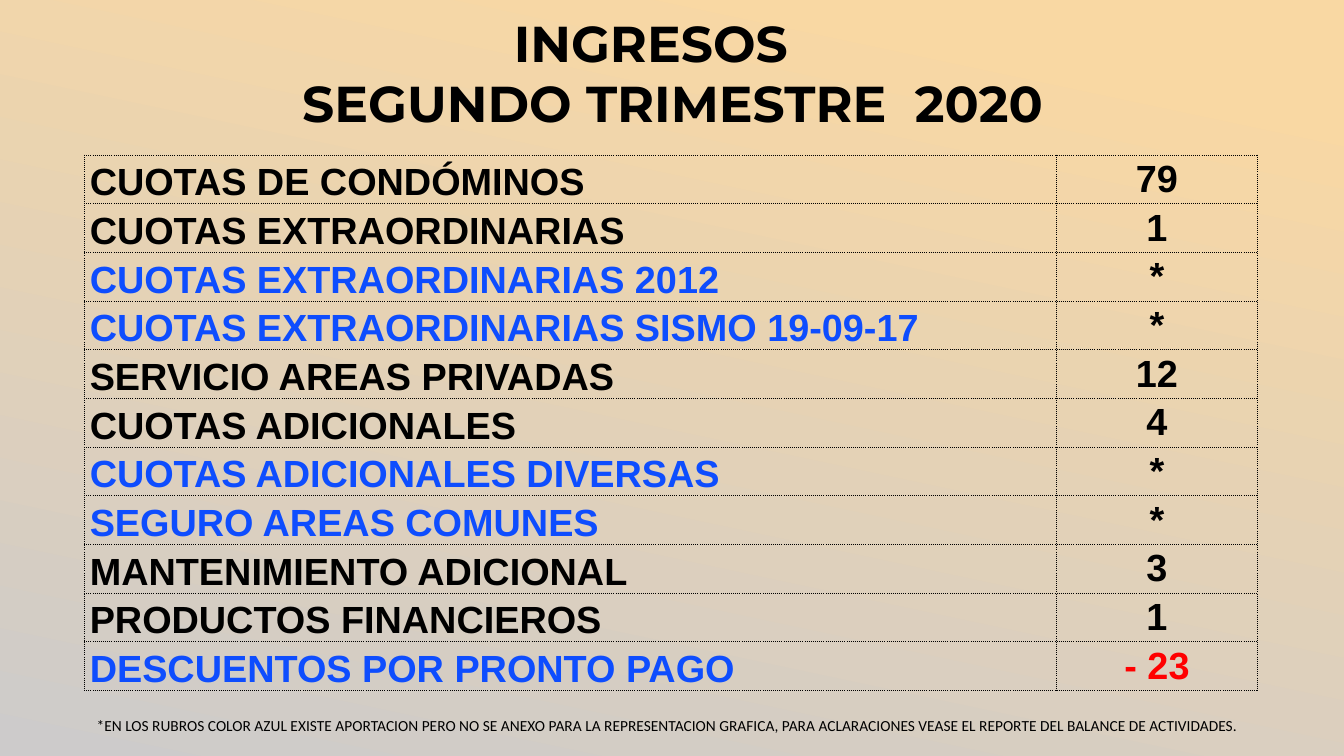
from dataclasses import dataclass

from lxml.etree import SubElement
from pptx import Presentation
from pptx.dml.color import RGBColor
from pptx.enum.text import MSO_ANCHOR as Anchor, PP_ALIGN as Align
from pptx.oxml.ns import qn
from pptx.util import Inches, Pt

COLORS = {
    "black": "000000",
    "blue": "0E4DFE",
    "red": "FF0000",
    "sand": "F9D8A3",
    "gray": "CDCBCB",
}


@dataclass
class Income:
    concept: str
    amount: str
    concept_color: str = "black"
    amount_color: str = "black"


INCOMES = [
    Income("CUOTAS DE CONDÓMINOS", "79"),
    Income("CUOTAS EXTRAORDINARIAS", "1"),
    Income("CUOTAS EXTRAORDINARIAS 2012", "*", "blue"),
    Income("CUOTAS EXTRAORDINARIAS SISMO 19-09-17", "*", "blue"),
    Income("SERVICIO AREAS PRIVADAS", "12"),
    Income("CUOTAS ADICIONALES", "4"),
    Income("CUOTAS ADICIONALES DIVERSAS", "*", "blue"),
    Income("SEGURO AREAS COMUNES", "*", "blue"),
    Income("MANTENIMIENTO ADICIONAL", "3"),
    Income("PRODUCTOS FINANCIEROS", "1"),
    Income("DESCUENTOS POR PRONTO PAGO", "- 23", "blue", "red"),
]


def rgb(name: str) -> RGBColor:
    return RGBColor.from_string(COLORS[name])


def write(paragraph, text: str, *, size: float, font: str, color: str = "black",
          bold: bool = False, align=Align.LEFT, spacing: float = 1.0) -> None:
    paragraph.alignment = align
    paragraph.line_spacing = spacing
    run = paragraph.add_run()
    run.text = text
    run.font.size = Pt(size)
    run.font.name = font
    run.font.bold = bold
    run.font.color.rgb = rgb(color)


def add_frame(slide, left: float, top: float, width: float, height: float):
    frame = slide.shapes.add_textbox(
        Inches(left), Inches(top), Inches(width), Inches(height)).text_frame
    frame.word_wrap = True
    return frame


def paint_background(slide) -> None:
    fill = slide.background.fill
    fill.gradient()
    fill.gradient_angle = 360 - 102
    for stop, color, position in zip(fill.gradient_stops, ("sand", "gray"), (0.1, 1)):
        stop.color.rgb = rgb(color)
        stop.position = position


def add_dotted_borders(cell) -> None:
    properties = cell._tc.get_or_add_tcPr()
    for index, side in enumerate(("lnL", "lnR", "lnT", "lnB")):
        border = properties.makeelement(qn(f"a:{side}"), {"w": str(Pt(1))})
        properties.insert(index, border)
        solid = SubElement(border, qn("a:solidFill"))
        SubElement(solid, qn("a:srgbClr"), val=COLORS["black"])
        SubElement(border, qn("a:prstDash"), val="sysDot")


def fill_cell(cell, text: str, color: str, align, anchor) -> None:
    cell.margin_left = cell.margin_right = Inches(0.05)
    cell.margin_top = cell.margin_bottom = 0
    cell.vertical_anchor = anchor
    cell.fill.background()
    add_dotted_borders(cell)
    write(cell.text_frame.paragraphs[0], text, size=27, font="Arial",
          color=color, bold=True, align=align, spacing=1.07)


def add_title(slide) -> None:
    frame = add_frame(slide, 2.47, 0.07, 8.4, 1.31)
    offset = Inches(0.43)
    frame.margin_left, frame.margin_right = 0, offset
    heading, period = frame.paragraphs[0], frame.add_paragraph()
    period._p.get_or_add_pPr().set("marL", str(offset))
    for paragraph, text in ((heading, "INGRESOS"), (period, "SEGUNDO TRIMESTRE  2020")):
        write(paragraph, text, size=36, font="Montserrat", bold=True, align=Align.CENTER)


def add_income_table(slide) -> None:
    table = slide.shapes.add_table(
        len(INCOMES), 2, Inches(0.84), Inches(1.54), Inches(11.63), Inches(5.31)).table
    table.first_row = table.horz_banding = False
    for column, width in zip(table.columns, (9.64, 1.99)):
        column.width = Inches(width)
    for row, income in zip(table.rows, INCOMES):
        concept, amount = row.cells
        fill_cell(concept, income.concept, income.concept_color, Align.LEFT, Anchor.BOTTOM)
        fill_cell(amount, income.amount, income.amount_color, Align.CENTER, Anchor.TOP)


def add_footnote(slide) -> None:
    footnote = add_frame(slide, 0.86, 7.06, 12.22, 0.29)
    write(footnote.paragraphs[0],
          "*EN LOS RUBROS COLOR AZUL EXISTE APORTACION PERO NO SE ANEXO PARA LA "
          "REPRESENTACION GRAFICA, PARA ACLARACIONES VEASE EL REPORTE DEL BALANCE "
          "DE ACTIVIDADES.", size=11, font="Calibri")


def main() -> None:
    deck = Presentation()
    deck.slide_width, deck.slide_height = Inches(13.33), Inches(7.5)
    slide = deck.slides.add_slide(deck.slide_layouts[6])
    paint_background(slide)
    add_title(slide)
    add_income_table(slide)
    add_footnote(slide)
    deck.save("out.pptx")


if __name__ == "__main__":
    main()
